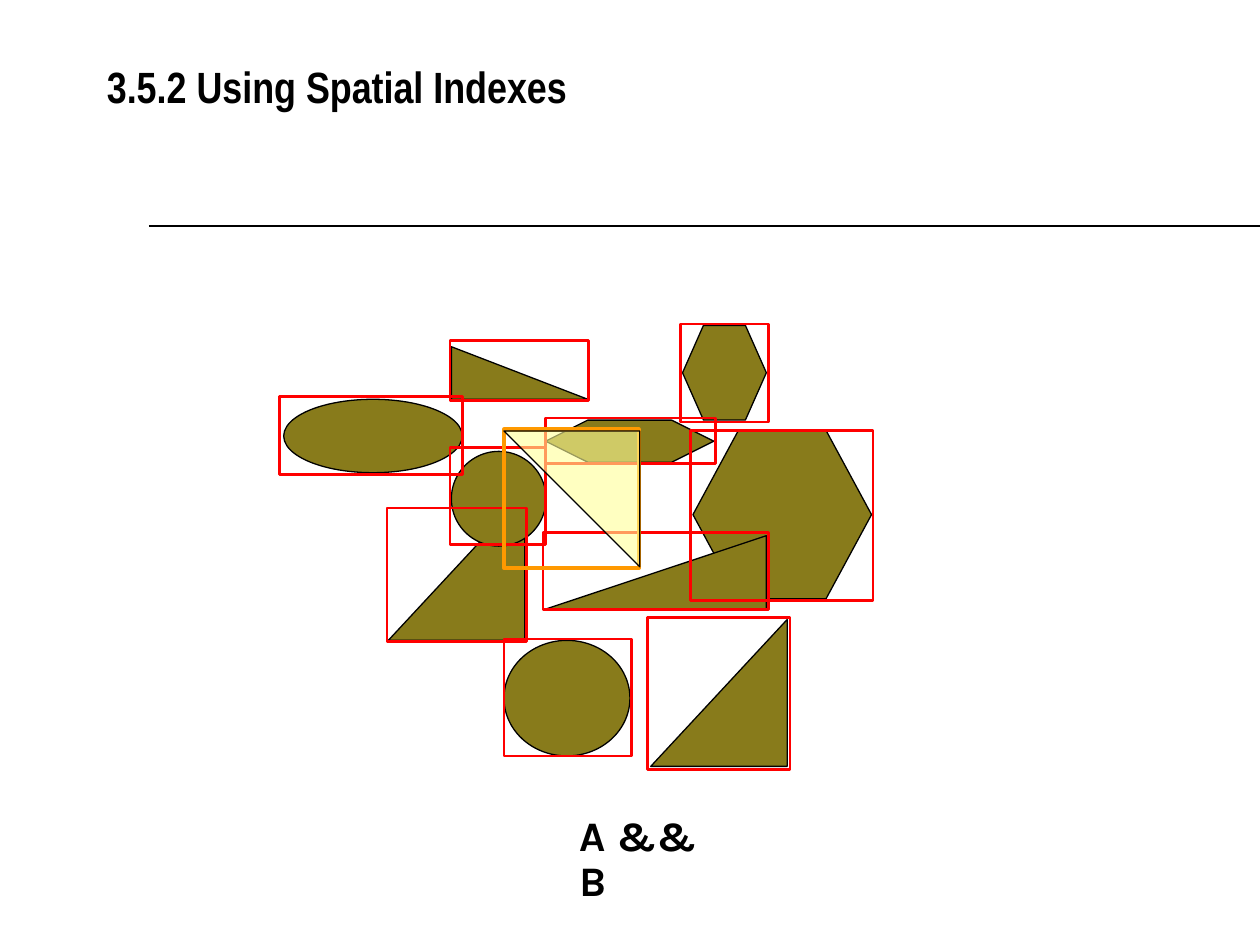
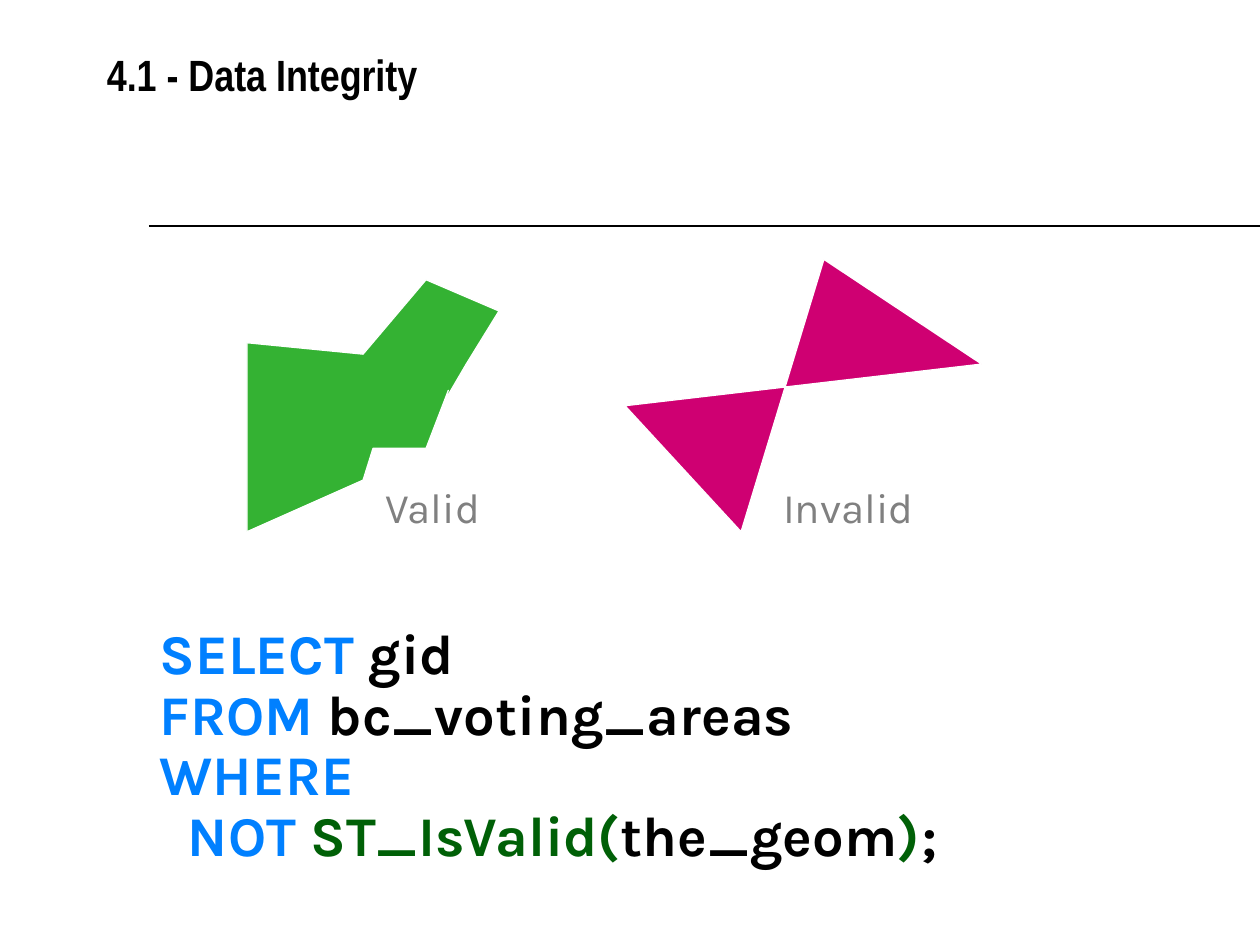
from pptx import Presentation
from pptx.dml.color import RGBColor
from pptx.enum.shapes import MSO_CONNECTOR, MSO_SHAPE
from pptx.enum.text import MSO_ANCHOR, MSO_AUTO_SIZE, PP_ALIGN
from pptx.oxml.ns import qn
from pptx.util import Cm, Pt
from lxml import etree

ELLIPSE = MSO_SHAPE.OVAL
HEXAGON = MSO_SHAPE.HEXAGON
TRIANGLE = MSO_SHAPE.RIGHT_TRIANGLE
RECT = MSO_SHAPE.RECTANGLE
STRAIGHT = MSO_CONNECTOR.STRAIGHT
TOP = MSO_ANCHOR.TOP
LEFT = PP_ALIGN.LEFT
NO_FIT = MSO_AUTO_SIZE.NONE
TITLE_ONLY = 5

TITLE_FONT, BODY_FONT = "Arial Narrow", "Karla"
BLACK, WHITE, GRAY = "000000", "FFFFFF", "808080"
OLIVE, RED, ORANGE, YELLOW = "887B1B", "FF0000", "FF9900", "FFFF99"
GREEN, PINK = "34B233", "CF0072"
KEYWORD, FUNCTION = "0080FF", "006007"

# Features: kind, box in cm, flip, hexagon inset
FEATURES = [
    (ELLIPSE, (5.72, 8.05, 3.6, 1.48), "", None),
    (HEXAGON, (13.97, 8.68, 3.6, 3.39), "", 0.27),
    (TRIANGLE, (11, 10.8, 4.45, 1.48), "H", None),
    (TRIANGLE, (9.1, 6.99, 2.75, 1.06), "", None),
    (TRIANGLE, (7.83, 9.95, 2.75, 2.96), "H", None),
    (TRIANGLE, (13.12, 12.49, 2.75, 2.96), "H", None),
    (HEXAGON, (11, 8.47, 3.39, 0.85), "", 1),
    (HEXAGON, (13.76, 6.56, 1.69, 1.91), "", 0.25),
    (ELLIPSE, (9.1, 9.1, 1.91, 1.91), "", None),
    (ELLIPSE, (10.16, 12.91, 2.54, 2.33), "", None),
]
BOUNDING_BOXES = [
    (5.64, 8, 3.68, 1.57), (9.07, 9.02, 1.93, 1.96),
    (9.07, 6.86, 2.79, 1.22), (13.72, 6.53, 1.78, 1.98),
    (11, 8.43, 3.43, 0.91), (13.92, 8.68, 3.68, 3.43),
    (10.95, 10.74, 4.55, 1.55), (7.8, 10.24, 2.82, 2.69),
    (10.16, 12.88, 2.57, 2.36), (13.06, 12.45, 2.87, 3.07),
]
VALID_POLYGON = [
    (4.98, 10.72), (4.98, 6.91), (7.32, 7.14), (8.59, 5.64),
    (10.06, 6.27), (9.4, 7.34), (9.02, 7.99), (8.92, 8.18),
    (9.04, 7.87), (8.59, 9.04), (7.52, 9.04), (7.32, 9.68),
]
INVALID_POLYGON = [(14.94, 10.72), (12.6, 8.18), (19.79, 7.34), (16.61, 5.23)]
QUERY = [
    [("SELECT ", KEYWORD), ("gid", BLACK)],
    [("FROM ", KEYWORD), ("bc_voting_areas", BLACK)],
    [("WHERE", KEYWORD)],
    [("  NOT ", KEYWORD), ("ST_IsValid(", FUNCTION), ("the_geom", BLACK),
     (")", FUNCTION), (";", BLACK)],
]


def rgb(color):
    return RGBColor.from_string(color)


def add_run(p, text, font, size, color, bold):
    r = p.add_run()
    r.text = text
    r.font.name, r.font.size, r.font.bold = font, Pt(size), bold
    r.font.color.rgb = rgb(color)


def add_slide(prs, title, top):
    """Slide with its title and the rule below it."""
    s = prs.slides.add_slide(prs.slide_layouts[TITLE_ONLY])
    rule = s.shapes.add_connector(STRAIGHT, Cm(3), Cm(4.55), Cm(25.4), Cm(4.55))
    rule.line.color.rgb = rgb(BLACK)
    rule.line.width = Pt(1)
    etree.SubElement(rule._element.spPr, qn("a:effectLst"))

    sp = s.shapes.title
    sp.left, sp.top, sp.width, sp.height = Cm(1.9), Cm(top), Cm(21.59), Cm(2.74)
    tf = sp.text_frame
    tf.vertical_anchor = TOP
    tf.auto_size = NO_FIT
    p = tf.paragraphs[0]
    p.alignment = LEFT
    add_run(p, title, TITLE_FONT, 25, BLACK, True)
    return s


def style(sp, fill, line, width):
    sp.shadow.inherit = False
    if fill:
        sp.fill.solid()
        sp.fill.fore_color.rgb = rgb(fill)
    else:
        sp.fill.background()
    sp.line.color.rgb = rgb(line)
    sp.line.width = Pt(width)


def add_preset(s, kind, box, fill=None, line=BLACK, width=0.75, flip="", inset=None):
    sp = s.shapes.add_shape(kind, *map(Cm, box))
    style(sp, fill, line, width)
    for axis in flip:
        sp._element.spPr.find(qn("a:xfrm")).set("flip" + axis, "1")
    if inset is not None:
        sp.adjustments[0] = inset
    return sp


def set_opacity(sp, percent):
    color = sp._element.spPr.find(qn("a:solidFill"))[0]
    etree.SubElement(color, qn("a:alpha")).set("val", str(percent * 1000))


def add_polygon(s, points, fill):
    start, *rest = [(Cm(x), Cm(y)) for x, y in points]
    builder = s.shapes.build_freeform(*start)
    builder.add_line_segments(rest, close=True)
    style(builder.convert_to_shape(), fill, WHITE, 0.75)


def add_text(s, box, lines, size, bold=True):
    tf = s.shapes.add_textbox(*map(Cm, box)).text_frame
    tf.word_wrap = True
    for i, runs in enumerate(lines):
        p = tf.paragraphs[0] if i == 0 else tf.add_paragraph()
        p.line_spacing = 0.9
        for text, color in runs:
            add_run(p, text, BODY_FONT, size, color, bold)


def build_spatial_indexes(prs):
    s = add_slide(prs, "3.5.2 Using Spatial Indexes", 1.07)
    for kind, box, flip, inset in FEATURES:
        add_preset(s, kind, box, OLIVE, flip=flip, inset=inset)
    for box in BOUNDING_BOXES:
        add_preset(s, RECT, box, line=RED, width=1.5)

    # Query geometry and its bounding box
    add_preset(s, RECT, (10.16, 8.66, 2.72, 2.79), line=ORANGE, width=2.5)
    query = add_preset(s, TRIANGLE, (10.16, 8.69, 2.74, 2.74), YELLOW, flip="HV")
    set_opacity(query, 60)
    add_text(s, (11.43, 16.31, 3.25, 1.17), [[("A && B", BLACK)]], 24)


def build_data_integrity(prs):
    s = add_slide(prs, "4.1 - Data Integrity", 0.84)
    add_polygon(s, VALID_POLYGON, GREEN)
    add_polygon(s, INVALID_POLYGON, PINK)
    for label, left in (("Valid", 7.52), ("Invalid", 15.54)):
        add_text(s, (left, 9.7, 4.88, 1.17), [[(label, GRAY)]], 24, bold=False)
    add_text(s, (2.97, 12.5, 20.75, 5.18), QUERY, 32)


def main():
    prs = Presentation()
    prs.slide_width, prs.slide_height = Cm(25.4), Cm(19.05)
    build_spatial_indexes(prs)
    build_data_integrity(prs)
    prs.save("out.pptx")


if __name__ == "__main__":
    main()
